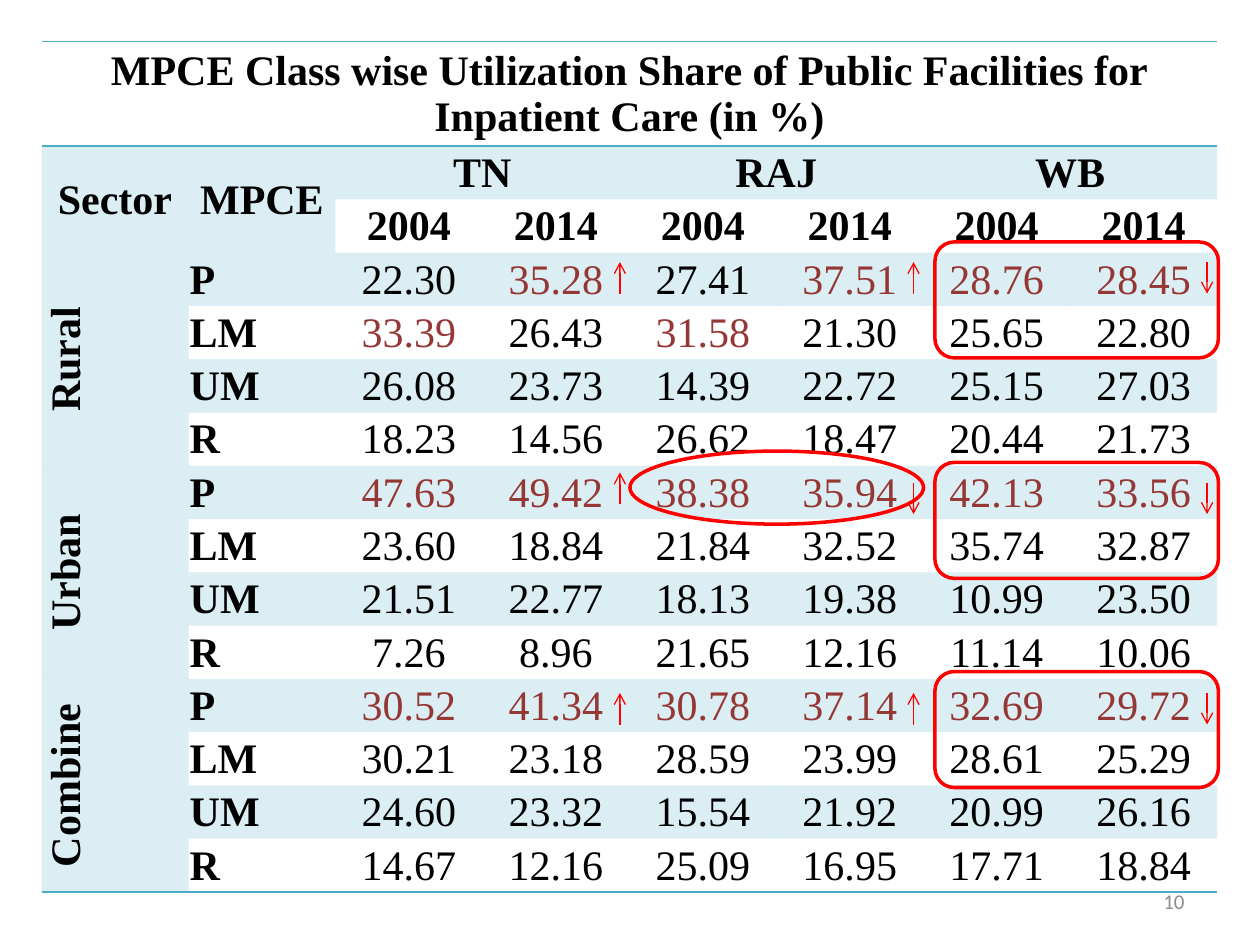
from lxml.etree import SubElement
from pptx import Presentation
from pptx.dml.color import RGBColor
from pptx.enum.shapes import MSO_CONNECTOR as Connector, MSO_SHAPE as Shape
from pptx.enum.text import MSO_ANCHOR as Anchor, PP_ALIGN as Align
from pptx.oxml import parse_xml
from pptx.oxml.ns import nsdecls, qn
from pptx.util import Inches, Pt

TITLE = "MPCE Class wise Utilization Share of Public Facilities for Inpatient Care (in %)"
STATES = ["TN", "RAJ", "WB"]
YEARS = ["2004", "2014"]
CLASSES = ["P", "LM", "UM", "R"]
SHARES = {
    "Rural": [
        [22.30, 35.28, 27.41, 37.51, 28.76, 28.45],
        [33.39, 26.43, 31.58, 21.30, 25.65, 22.80],
        [26.08, 23.73, 14.39, 22.72, 25.15, 27.03],
        [18.23, 14.56, 26.62, 18.47, 20.44, 21.73],
    ],
    "Urban": [
        [47.63, 49.42, 38.38, 35.94, 42.13, 33.56],
        [23.60, 18.84, 21.84, 32.52, 35.74, 32.87],
        [21.51, 22.77, 18.13, 19.38, 10.99, 23.50],
        [7.26, 8.96, 21.65, 12.16, 11.14, 10.06],
    ],
    "Combine": [
        [30.52, 41.34, 30.78, 37.14, 32.69, 29.72],
        [30.21, 23.18, 28.59, 23.99, 28.61, 25.29],
        [24.60, 23.32, 15.54, 21.92, 20.99, 26.16],
        [14.67, 12.16, 25.09, 16.95, 17.71, 18.84],
    ],
}
HEADER_ROWS, LABEL_COLUMNS = 3, 2
ROW_COUNT = HEADER_ROWS + len(SHARES) * len(CLASSES)
COLUMN_COUNT = LABEL_COLUMNS + len(STATES) * len(YEARS)
TITLE_HEIGHT = 0.83
NO_STYLE = "{2D5ABB26-0587-4C30-8999-92F81FD0307C}"
BLACK, MAROON, TEAL, RED, GREY = "000000", "953735", "4BACC6", "FF0000", "8C8C8C"
CELL_FORMAT = {
    "margin_left": Inches(0.01), "margin_right": Inches(0.01),
    "margin_top": Inches(0.01), "margin_bottom": 0,
    "vertical_anchor": Anchor.MIDDLE,
}


def color(value):
    return RGBColor.from_string(value)


def set_values(target, values):
    for name, value in values.items():
        setattr(target, name, value)


def write(frame, text, size=24, font="Times New Roman", ink=BLACK, bold=True, align=Align.CENTER):
    paragraph = frame.paragraphs[0]
    paragraph.alignment = align
    run = paragraph.add_run()
    run.text = text
    set_values(run.font, {"size": Pt(size), "name": font, "bold": bold})
    run.font.color.rgb = color(ink)


def tint(cell):
    cell.fill.solid()
    cell.fill.fore_color.rgb = color(TEAL)
    swatch = next(cell._tc.tcPr.iter(qn("a:srgbClr")))
    SubElement(swatch, qn("a:alpha"), val="20000")


def add_borders(cell, *sides):
    properties = cell._tc.get_or_add_tcPr()
    for index, side in enumerate(sides):
        properties.insert(index, parse_xml(
            f'<a:{side} {nsdecls("a")} w="12700"><a:solidFill>'
            f'<a:srgbClr val="{TEAL}"/></a:solidFill></a:{side}>'))


def write_headings(table):
    table.cell(0, 0).merge(table.cell(0, COLUMN_COUNT - 1))
    write(table.cell(0, 0).text_frame, TITLE)
    for column, label in enumerate(["Sector", "MPCE"]):
        table.cell(1, column).merge(table.cell(2, column))
        write(table.cell(1, column).text_frame, label)
    for index, state in enumerate(STATES):
        first = LABEL_COLUMNS + index * len(YEARS)
        table.cell(1, first).merge(table.cell(1, first + len(YEARS) - 1))
        write(table.cell(1, first).text_frame, state)
        for offset, year in enumerate(YEARS):
            write(table.cell(2, first + offset).text_frame, year)


def write_sector(table, top, sector, shares):
    heading = table.cell(top, 0)
    heading.merge(table.cell(top + len(CLASSES) - 1, 0))
    heading._tc.get_or_add_tcPr().set("vert", "vert270")
    write(heading.text_frame, sector)
    highest = [max(column) for column in zip(*shares)]
    for row, (label, values) in enumerate(zip(CLASSES, shares), top):
        write(table.cell(row, 1).text_frame, label, align=Align.LEFT)
        for column, value in enumerate(values):
            ink = MAROON if value == highest[column] else BLACK
            write(table.cell(row, LABEL_COLUMNS + column).text_frame,
                  f"{value:.2f}", ink=ink, bold=False)


def add_share_table(slide, left, top, width, height):
    frame = slide.shapes.add_table(ROW_COUNT, COLUMN_COUNT, Inches(left), Inches(top),
                                   Inches(width), Inches(height))
    table = frame.table
    set_values(table, {"first_row": False, "horz_banding": False})
    next(table._tbl.iter(qn("a:tableStyleId"))).text = NO_STYLE
    for column in table.columns:
        column.width = Inches(width / COLUMN_COUNT)
    for index, row in enumerate(table.rows):
        row.height = Inches((height - TITLE_HEIGHT) / (ROW_COUNT - 1) if index else TITLE_HEIGHT)
        for column, cell in enumerate(row.cells):
            set_values(cell, CELL_FORMAT)
            if index % 2 or (index and column == 0):
                tint(cell)
            else:
                cell.fill.background()
            if index == 0:
                add_borders(cell, "lnT", "lnB")
    write_headings(table)
    for index, (sector, shares) in enumerate(SHARES.items()):
        write_sector(table, HEADER_ROWS + index * len(CLASSES), sector, shares)
    add_borders(table.cell(ROW_COUNT - len(CLASSES), 0), "lnB")
    for column in range(COLUMN_COUNT):
        add_borders(table.cell(ROW_COUNT - 1, column), "lnB")


def add_page_number(slide, left, top, width, height):
    box = slide.shapes.add_textbox(Inches(left), Inches(top), Inches(width), Inches(height))
    set_values(box.text_frame, {"word_wrap": True, "vertical_anchor": Anchor.MIDDLE})
    write(box.text_frame, "10", size=12, font="Calibri", ink=GREY, bold=False, align=Align.RIGHT)


def add_trend_arrow(slide, x, start, end):
    arrow = slide.shapes.add_connector(Connector.STRAIGHT, Inches(x), Inches(start),
                                       Inches(x), Inches(end))
    arrow.line.color.rgb = color(RED)
    arrow.line.width = Pt(0.75)
    SubElement(arrow.line._get_or_add_ln(), qn("a:tailEnd"), type="arrow")
    SubElement(arrow._element.spPr, qn("a:effectLst"))


def add_outline(slide, kind, left, top, width, height):
    shape = slide.shapes.add_shape(kind, Inches(left), Inches(top), Inches(width), Inches(height))
    shape.shadow.inherit = False
    shape.fill.background()
    shape.line.color.rgb = color(RED)
    shape.line.width = Pt(2)


def add_highlights(slide):
    rises = [(4.92, 2.08), (7.25, 2.08), (4.92, 3.75), (4.92, 5.5), (7.25, 5.5)]
    falls = [(9.58, 2.08), (9.58, 3.83), (9.58, 5.5), (7.25, 3.83)]
    for x, top in rises:
        add_trend_arrow(slide, x, top + 0.25, top)
    for x, top in falls:
        add_trend_arrow(slide, x, top, top + 0.25)
    for top in (1.92, 3.67, 5.33):
        add_outline(slide, Shape.ROUNDED_RECTANGLE, 7.42, top, 2.25, 0.92)
    add_outline(slide, Shape.OVAL, 5, 3.58, 2.33, 0.58)


def main():
    presentation = Presentation()
    set_values(presentation, {"slide_width": Inches(10), "slide_height": Inches(7.5)})
    slide = presentation.slides.add_slide(presentation.slide_layouts[6])
    add_share_table(slide, 0.33, 0.33, 9.33, 6.75)
    add_page_number(slide, 7.17, 6.95, 2.33, 0.4)
    add_highlights(slide)
    presentation.save("out.pptx")


if __name__ == "__main__":
    main()
